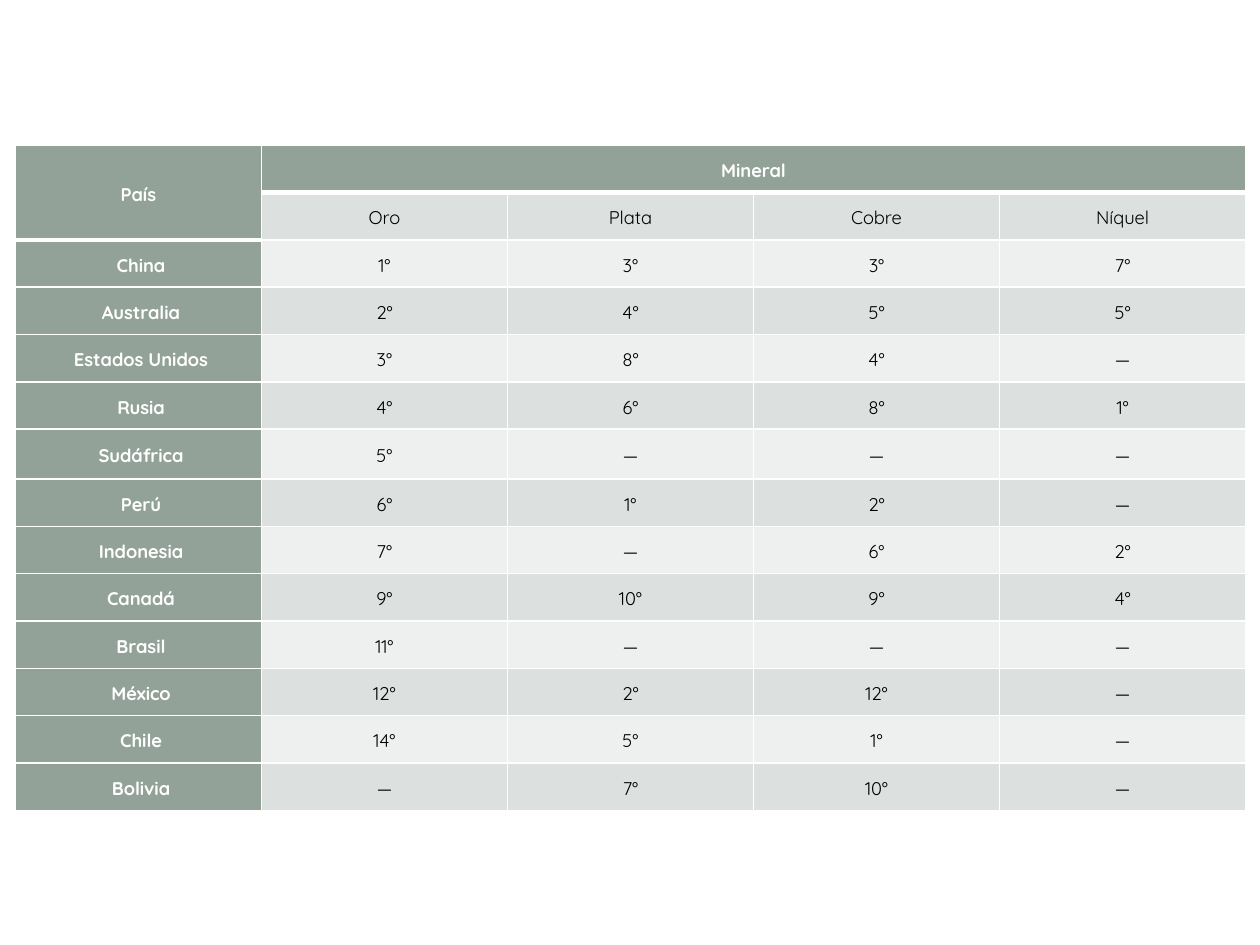
from lxml import etree
from pptx import Presentation
from pptx.dml.color import RGBColor
from pptx.enum import text
from pptx.oxml.ns import qn
from pptx.util import Pt

# Content
COUNTRY, MINERAL = "País", "Mineral"
MINERALS = ["Oro", "Plata", "Cobre", "Níquel"]
RANKS = [
    ("China", "1°", "3°", "3°", "7°"),
    ("Australia", "2°", "4°", "5°", "5°"),
    ("Estados Unidos", "3°", "8°", "4°", "—"),
    ("Rusia", "4°", "6°", "8°", "1°"),
    ("Sudáfrica", "5°", "—", "—", "—"),
    ("Perú", "6°", "1°", "2°", "—"),
    ("Indonesia", "7°", "—", "6°", "2°"),
    ("Canadá", "9°", "10°", "9°", "4°"),
    ("Brasil", "11°", "—", "—", "—"),
    ("México", "12°", "2°", "12°", "—"),
    ("Chile", "14°", "5°", "1°", "—"),
    ("Bolivia", "—", "7°", "10°", "—"),
]
GRID = [(COUNTRY, MINERAL, "", "", ""), ("", *MINERALS), *RANKS]

# Format
FONT, SIZE = "Quicksand", 10.5
WHITE, BLACK, GREEN = "FFFFFF", "000000", "93A299"
BANDS = ["EEF0EF", "DCE0DE"]
LEFT, TOP, COL_W, ROW_H, TALL_H = 8.8, 83, 140.6, 27.05, 28.5
TALL_ROW = 6


def rgb(value):
    return RGBColor.from_string(value)


def set_borders(cell, bottom=1):
    tc_pr = cell._tc.get_or_add_tcPr()
    for side, width in (("L", 1), ("R", 1), ("T", 1), ("B", bottom)):
        ln = etree.SubElement(tc_pr, qn("a:ln" + side), w=str(Pt(width)))
        fill = etree.SubElement(ln, qn("a:solidFill"))
        etree.SubElement(fill, qn("a:srgbClr"), val=WHITE)


def write(cell, words, color=BLACK, bold=False, indent=0):
    cell.vertical_anchor = text.MSO_ANCHOR.MIDDLE
    cell.margin_left, cell.margin_right = Pt(5 + indent), Pt(5)
    cell.margin_top = cell.margin_bottom = Pt(2.2)
    p = cell.text_frame.paragraphs[0]
    p.alignment = text.PP_ALIGN.CENTER
    p.line_spacing = 1.15
    p.space_before = p.space_after = Pt(12)
    p.font.size = Pt(SIZE)
    if words:
        r = p.add_run()
        r.text = words
        r.font.name, r.font.size, r.font.bold = FONT, Pt(SIZE), bold
        r.font.color.rgb = rgb(color)


prs = Presentation()
prs.slide_width, prs.slide_height = Pt(720), Pt(540)
s = prs.slides.add_slide(prs.slide_layouts[6])

# Table grid
heights = [TALL_H if i == TALL_ROW else ROW_H for i in range(len(GRID))]
n_cols = len(GRID[0])
table = s.shapes.add_table(len(GRID), n_cols, Pt(LEFT), Pt(TOP),
                           Pt(COL_W * n_cols), Pt(sum(heights))).table
for column in table.columns:
    column.width = Pt(COL_W)
for row, height in zip(table.rows, heights):
    row.height = Pt(height)

# Cells: green heads, banded ranks
for i, words_row in enumerate(GRID):
    for j, words in enumerate(words_row):
        cell = table.cell(i, j)
        head = i == 0 or j == 0
        set_borders(cell, bottom=3 if i == 0 or (i, j) == (1, 0) else 1)
        cell.fill.solid()
        cell.fill.fore_color.rgb = rgb(GREEN if head else BANDS[i % 2])
        write(cell, words, color=WHITE if head else BLACK, bold=head,
              indent=3 if j == 0 and i > 1 else 0)

# Merged heads
table.cell(0, 0).merge(table.cell(1, 0))
table.cell(0, 1).merge(table.cell(0, n_cols - 1))

prs.save("out.pptx")
